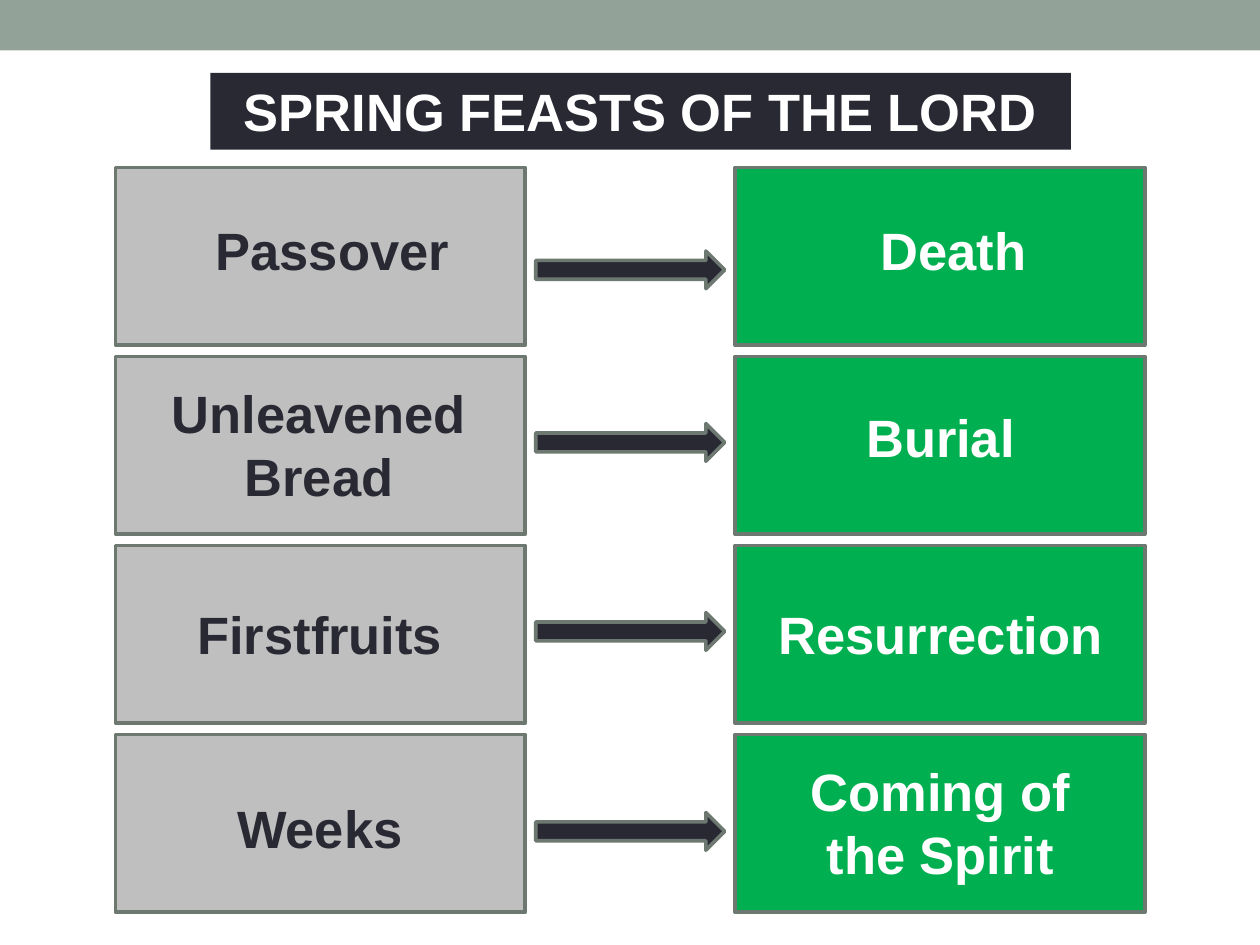
import pptx
import pptx.util
import pptx.dml.color
import pptx.enum.shapes
import pptx.enum.text

Cm = pptx.util.Cm
Pt = pptx.util.Pt
SHAPE = pptx.enum.shapes.MSO_SHAPE

COLOURS = {
    "band": "93A299",
    "dark": "292934",
    "light": "FFFFFF",
    "feast": "BFBFBF",
    "fulfilment": "00B050",
    "outline": "6D7871",
}
LABEL_FONT = {"name": "Arial", "size": Pt(30), "bold": True}
LABEL_FRAME = {
    "word_wrap": True,
    "auto_size": pptx.enum.text.MSO_AUTO_SIZE.SHAPE_TO_FIT_TEXT,
    "vertical_anchor": pptx.enum.text.MSO_ANCHOR.TOP,
}

# Lengths in cm
CARD_WIDTH, CARD_HEIGHT = 8.26, 3.58
FEAST_LEFT, FULFILMENT_LEFT = 2.33, 14.82
FIRST_ROW, ROW_PITCH = 3.38, 3.81
ARROW_LEFT, ARROW_WIDTH, ARROW_HEIGHT = 10.8, 3.81, 0.76
ONE_LINE, TWO_LINES = 1.55, 2.82

# Each label has its box inside the card; the arrow has its drop from the row top
ROWS = [
    (("Passover", (1.27, 0.89, 6.2, ONE_LINE)),
     ("Death", (1.3, 0.89, 6.2, ONE_LINE)), 1.68),
    (("Unleavened Bread", (0.81, 0.37, 6.58, TWO_LINES)),
     ("Burial", (1.04, 0.86, 6.2, ONE_LINE)), 1.35),
    (("Firstfruits", (1.02, 1.02, 6.2, ONE_LINE)),
     ("Resurrection", (0.43, 1.02, 7.42, ONE_LINE)), 1.35),
    (("Weeks", (1.02, 1.12, 6.2, ONE_LINE)),
     ("Coming of the Spirit", (1.04, 0.36, 6.2, TWO_LINES)), 1.57),
]


def rgb(key):
    return pptx.dml.color.RGBColor.from_string(COLOURS[key])


def set_all(target, values):
    for name, value in values.items():
        setattr(target, name, value)


def add_block(shapes, kind, box, fill, outlined=False):
    """Add a filled preset shape, with the grey-green outline if asked."""
    block = shapes.add_shape(kind, *(Cm(length) for length in box))
    block.shadow.inherit = False
    block.fill.solid()
    block.fill.fore_color.rgb = rgb(fill)
    if outlined:
        block.line.color.rgb = rgb("outline")
        block.line.width = Pt(2.08)
    else:
        block.line.fill.background()
    return block


def add_label(shapes, box, text, fill, colour):
    frame = add_block(shapes, SHAPE.RECTANGLE, box, fill).text_frame
    set_all(frame, LABEL_FRAME)
    paragraph = frame.paragraphs[0]
    paragraph.alignment = pptx.enum.text.PP_ALIGN.CENTER
    run = paragraph.add_run()
    run.text = text
    set_all(run.font, LABEL_FONT)
    run.font.color.rgb = rgb(colour)


def add_card(shapes, left, top, label, fill, colour):
    """Group an outlined card with the label placed inside it."""
    text, (dx, dy, width, height) = label
    card = shapes.add_group_shape().shapes
    add_block(card, SHAPE.RECTANGLE, (left, top, CARD_WIDTH, CARD_HEIGHT), fill, True)
    add_label(card, (left + dx, top + dy, width, height), text, fill, colour)


def add_heading(shapes):
    add_block(shapes, SHAPE.RECTANGLE, (0, 0, 25.4, 1.02), "band")
    add_label(shapes, (4.24, 1.47, 17.35, ONE_LINE),
              "SPRING FEASTS OF THE LORD", "dark", "light")


def add_row(shapes, top, feast, fulfilment, arrow_drop):
    add_card(shapes, FEAST_LEFT, top, feast, "feast", "dark")
    add_card(shapes, FULFILMENT_LEFT, top, fulfilment, "fulfilment", "light")
    add_block(shapes, SHAPE.RIGHT_ARROW,
              (ARROW_LEFT, top + arrow_drop, ARROW_WIDTH, ARROW_HEIGHT), "dark", True)


def main():
    deck = pptx.Presentation()
    deck.slide_width, deck.slide_height = Cm(25.4), Cm(19.05)
    slide = deck.slides.add_slide(deck.slide_layouts[6])
    add_heading(slide.shapes)
    for index, row in enumerate(ROWS):
        add_row(slide.shapes, FIRST_ROW + index * ROW_PITCH, *row)
    deck.save("out.pptx")


if __name__ == "__main__":
    main()
